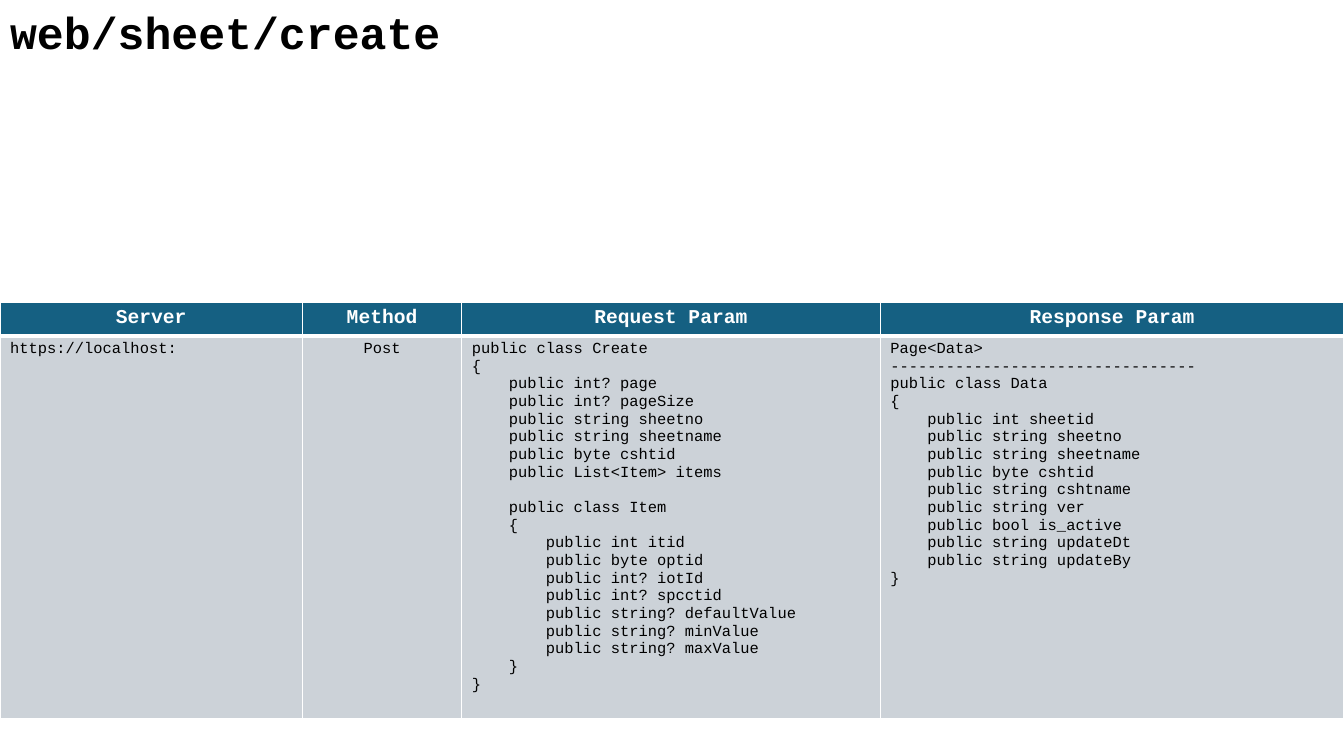
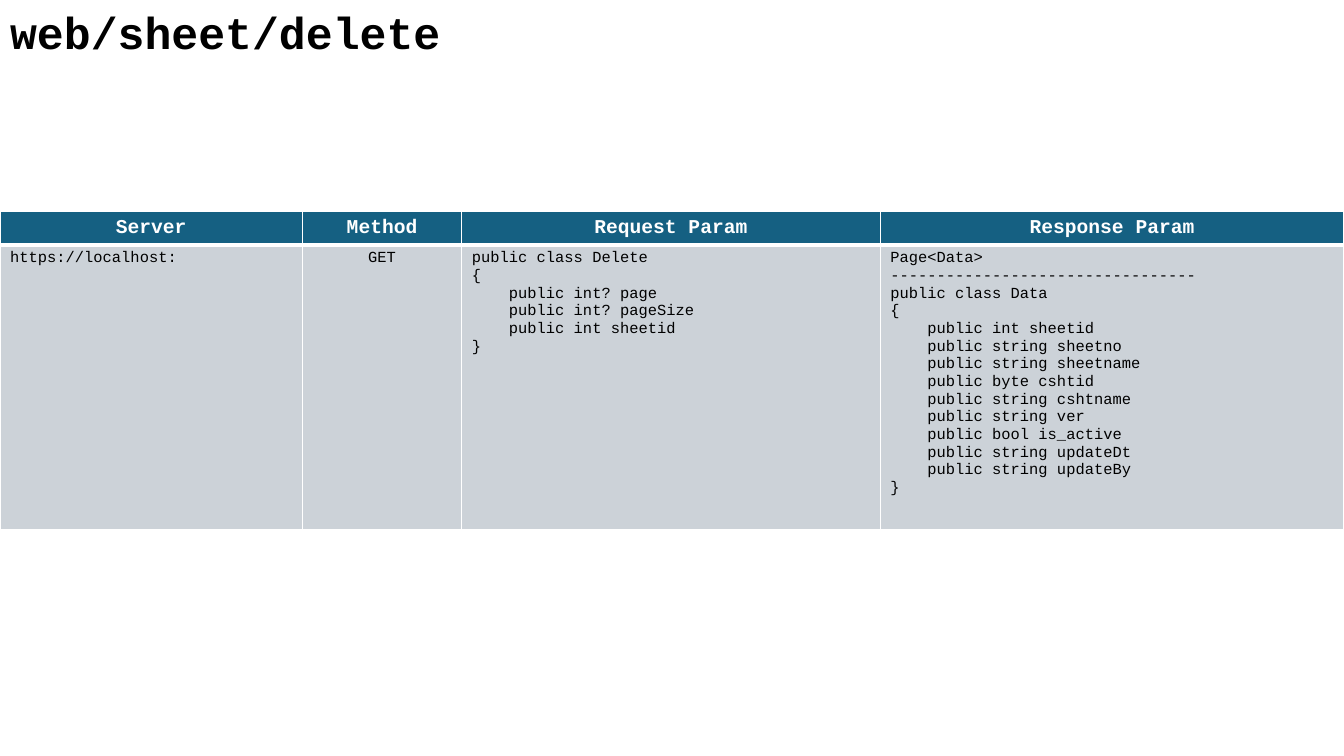
import pptx
import pptx.util
import pptx.dml.color
import pptx.enum.text
import pptx.oxml
import pptx.oxml.ns

Inches, Pt = pptx.util.Inches, pptx.util.Pt
ALIGN = pptx.enum.text.PP_ALIGN
ANCHOR = pptx.enum.text.MSO_ANCHOR

COLORS = {"heading": "156082", "body": "CCD2D8", "rule": "FFFFFF",
          "light": "FFFFFF", "dark": "000000"}
FONT = "Courier New"
STYLES = {
    "title": {"name": FONT, "size": Pt(32), "bold": True},
    "heading": {"name": FONT, "size": Pt(14), "bold": True},
    "code": {"name": FONT, "size": Pt(11), "bold": False},
}
CODE_LINE = Pt(12.5)
SLIDE_SIZE = (Inches(13.33), Inches(7.5))
TITLE_SHARE = (0.71, 0.085)
COLUMN_WEIGHTS = (3, 1.58, 4.15, 4.6)
HEADING_HEIGHT = Inches(0.33)
HEADINGS = ("Server", "Method", "Request Param", "Response Param")
COLUMN_ALIGN = (ALIGN.LEFT, ALIGN.CENTER, ALIGN.LEFT, ALIGN.LEFT)

SERVER = "https://localhost:"
CREATE_REQUEST = """public class Create
{
    public int? page
    public int? pageSize
    public string sheetno
    public string sheetname
    public byte cshtid
    public List<Item> items

    public class Item
    {
        public int itid
        public byte optid
        public int? iotId
        public int? spcctid
        public string? defaultValue
        public string? minValue
        public string? maxValue
    }
}"""
DELETE_REQUEST = """public class Delete
{
    public int? page
    public int? pageSize
    public int sheetid
}"""
PAGE_RESPONSE = """Page<Data>
---------------------------------
public class Data
{
    public int sheetid
    public string sheetno
    public string sheetname
    public byte cshtid
    public string cshtname
    public string ver
    public bool is_active
    public string updateDt
    public string updateBy
}"""

# Table top and height are shares of the slide height.
ENDPOINTS = (
    {"route": "web/sheet/create", "method": "Post", "request": CREATE_REQUEST,
     "top": 0.4, "height": 0.55},
    {"route": "web/sheet/delete", "method": "GET", "request": DELETE_REQUEST,
     "top": 0.28, "height": 0.42},
)


def rgb(color):
    return pptx.dml.color.RGBColor.from_string(COLORS[color])


def format_paragraph(paragraph, style, color, align):
    paragraph.alignment = align
    for attribute, value in STYLES[style].items():
        setattr(paragraph.font, attribute, value)
    paragraph.font.color.rgb = rgb(color)


def write_lines(frame, text, style, color, align):
    """Write one paragraph per line; an empty line becomes space before the next."""
    first = True
    for block_number, block in enumerate(text.split("\n\n")):
        for line_number, line in enumerate(block.split("\n")):
            paragraph = frame.paragraphs[0] if first else frame.add_paragraph()
            first = False
            paragraph.text = line
            format_paragraph(paragraph, style, color, align)
            if block_number and not line_number:
                paragraph.space_before = CODE_LINE


def rule_cell(cell, widths):
    """Draw cell borders; widths maps each side (L, R, T, B) to points."""
    properties = cell._tc.get_or_add_tcPr()
    for side, width in widths.items():
        properties.append(pptx.oxml.parse_xml(
            f'<a:ln{side} {pptx.oxml.ns.nsdecls("a")} w="{Pt(width)}">'
            f'<a:solidFill><a:srgbClr val="{COLORS["rule"]}"/></a:solidFill>'
            f'</a:ln{side}>'))


def fill_row(cells, texts, style, fill, color, aligns, widths):
    for cell, text, align in zip(cells, texts, aligns):
        rule_cell(cell, widths)
        cell.fill.solid()
        cell.fill.fore_color.rgb = rgb(fill)
        write_lines(cell.text_frame, text, style, color, align)


def add_title(slide, route, width, height):
    title = slide.shapes.title
    title.left, title.top, title.width, title.height = 0, 0, width, height
    frame = title.text_frame
    frame.auto_size = pptx.enum.text.MSO_AUTO_SIZE.NONE
    frame.vertical_anchor = ANCHOR.TOP
    write_lines(frame, route, "title", "dark", ALIGN.LEFT)


def add_endpoint_table(slide, endpoint, left, top, width, height):
    table = slide.shapes.add_table(2, len(HEADINGS), left, top, width, height).table
    for column, weight in zip(table.columns, COLUMN_WEIGHTS):
        column.width = round(width * weight / sum(COLUMN_WEIGHTS))
    heading_row, body_row = table.rows
    heading_row.height = HEADING_HEIGHT
    body_row.height = height - HEADING_HEIGHT
    fill_row(heading_row.cells, HEADINGS, "heading", "heading", "light",
             [ALIGN.CENTER] * len(HEADINGS), {"L": 1, "R": 1, "T": 1, "B": 3})
    details = (SERVER, endpoint["method"], endpoint["request"], PAGE_RESPONSE)
    fill_row(body_row.cells, details, "code", "body", "dark",
             COLUMN_ALIGN, {"L": 1, "R": 1, "T": 3, "B": 1})


def add_endpoint_slide(deck, endpoint):
    slide = deck.slides.add_slide(deck.slide_layouts.get_by_name("Title Only"))
    width, height = SLIDE_SIZE
    add_title(slide, endpoint["route"],
              round(width * TITLE_SHARE[0]), round(height * TITLE_SHARE[1]))
    add_endpoint_table(slide, endpoint, 0, round(height * endpoint["top"]),
                       width, round(height * endpoint["height"]))


def main():
    deck = pptx.Presentation()
    deck.slide_width, deck.slide_height = SLIDE_SIZE
    for endpoint in ENDPOINTS:
        add_endpoint_slide(deck, endpoint)
    deck.save("out.pptx")


if __name__ == "__main__":
    main()
